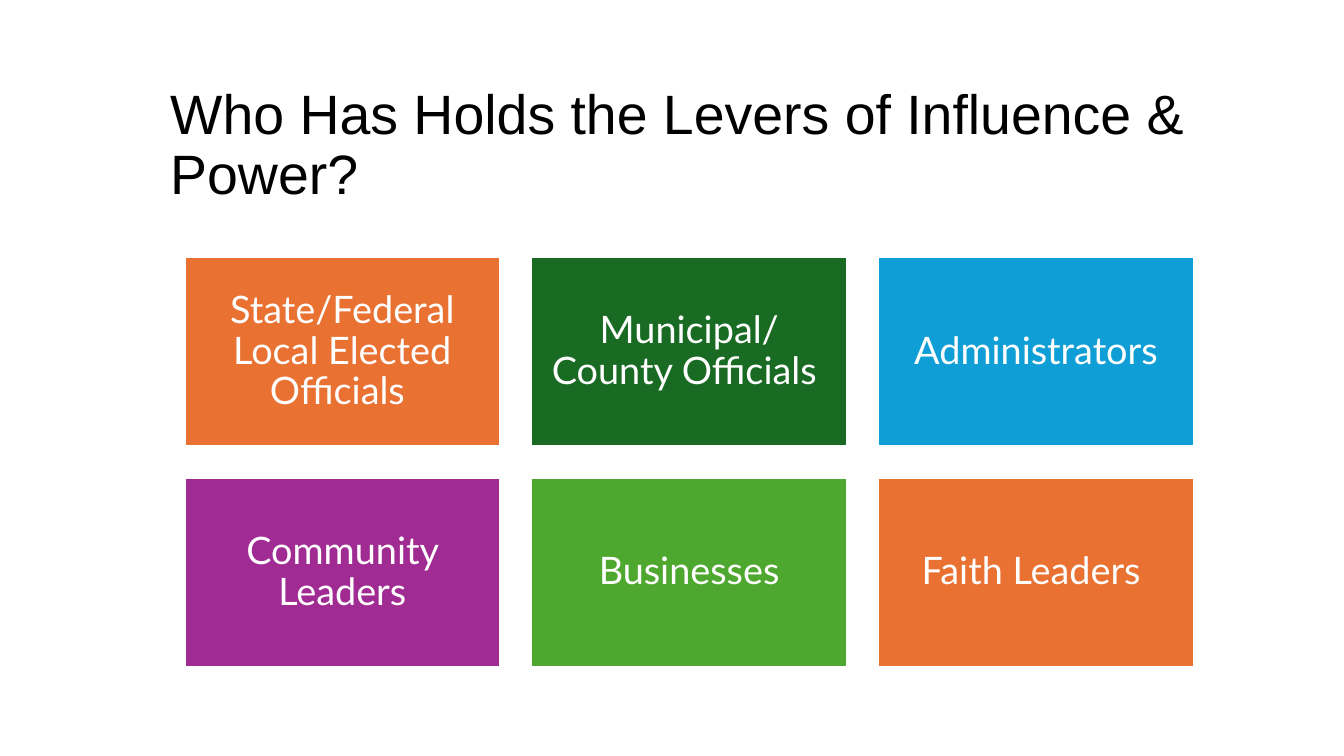
from pptx import Presentation
from pptx.dml.color import RGBColor
from pptx.enum.shapes import MSO_SHAPE
from pptx.enum.text import MSO_ANCHOR, PP_ALIGN
from pptx.util import Inches, Pt

RECTANGLE = MSO_SHAPE.RECTANGLE
MIDDLE = MSO_ANCHOR.MIDDLE
LEFT, CENTER = PP_ALIGN.LEFT, PP_ALIGN.CENTER

COLORS = {
    "black": "000000",
    "white": "FFFFFF",
    "orange": "E97132",
    "dark green": "196B24",
    "blue": "0F9ED5",
    "purple": "A02B93",
    "green": "4EA72E",
}

TITLE = "Who Has Holds the Levers of Influence & Power?"
# The space ending some labels shifts their centred last line slightly
GROUPS = [
    ("State/Federal Local Elected Officials ", "orange"),
    ("Municipal/County Officials ", "dark green"),
    ("Administrators", "blue"),
    ("Community Leaders", "purple"),
    ("Businesses", "green"),
    ("Faith Leaders ", "orange"),
]

# Card grid, in inches
COLUMNS = 3
GRID_LEFT, GRID_TOP = 1.83, 2.55
CARD_WIDTH, CARD_HEIGHT = 3.13, 1.88
GAP = 0.31
INSET = 0.11


def color(name):
    return RGBColor.from_string(COLORS[name])


def write_text(frame, text, font, size, color_name, align):
    frame.word_wrap = True
    frame.vertical_anchor = MIDDLE
    para = frame.paragraphs[0]
    para.text = text
    para.alignment = align
    para.line_spacing = 0.9
    para.font.name = font
    para.font.size = Pt(size)
    para.font.color.rgb = color(color_name)


def add_title(page):
    box = page.shapes.add_textbox(Inches(1.59), Inches(0.88), Inches(10.5), Inches(1.15))
    write_text(box.text_frame, TITLE, "Arial", 39.6, "black", LEFT)


def add_card(page, index, label, fill):
    row, column = divmod(index, COLUMNS)
    card = page.shapes.add_shape(
        RECTANGLE,
        Inches(GRID_LEFT + column * (CARD_WIDTH + GAP)),
        Inches(GRID_TOP + row * (CARD_HEIGHT + GAP)),
        Inches(CARD_WIDTH),
        Inches(CARD_HEIGHT),
    )
    card.shadow.inherit = False
    card.fill.solid()
    card.fill.fore_color.rgb = color(fill)
    card.line.color.rgb = color("white")
    card.line.width = Pt(1.5)
    frame = card.text_frame
    frame.margin_left = frame.margin_right = Inches(INSET)
    frame.margin_top = frame.margin_bottom = Inches(INSET)
    write_text(frame, label, "Lato", 27, "white", CENTER)


def main():
    deck = Presentation()
    deck.slide_width, deck.slide_height = Inches(13.33), Inches(7.5)
    page = deck.slides.add_slide(deck.slide_layouts[6])

    # Heading
    add_title(page)

    # Cards, row by row
    for index, (label, fill) in enumerate(GROUPS):
        add_card(page, index, label, fill)

    deck.save("out.pptx")


if __name__ == "__main__":
    main()
